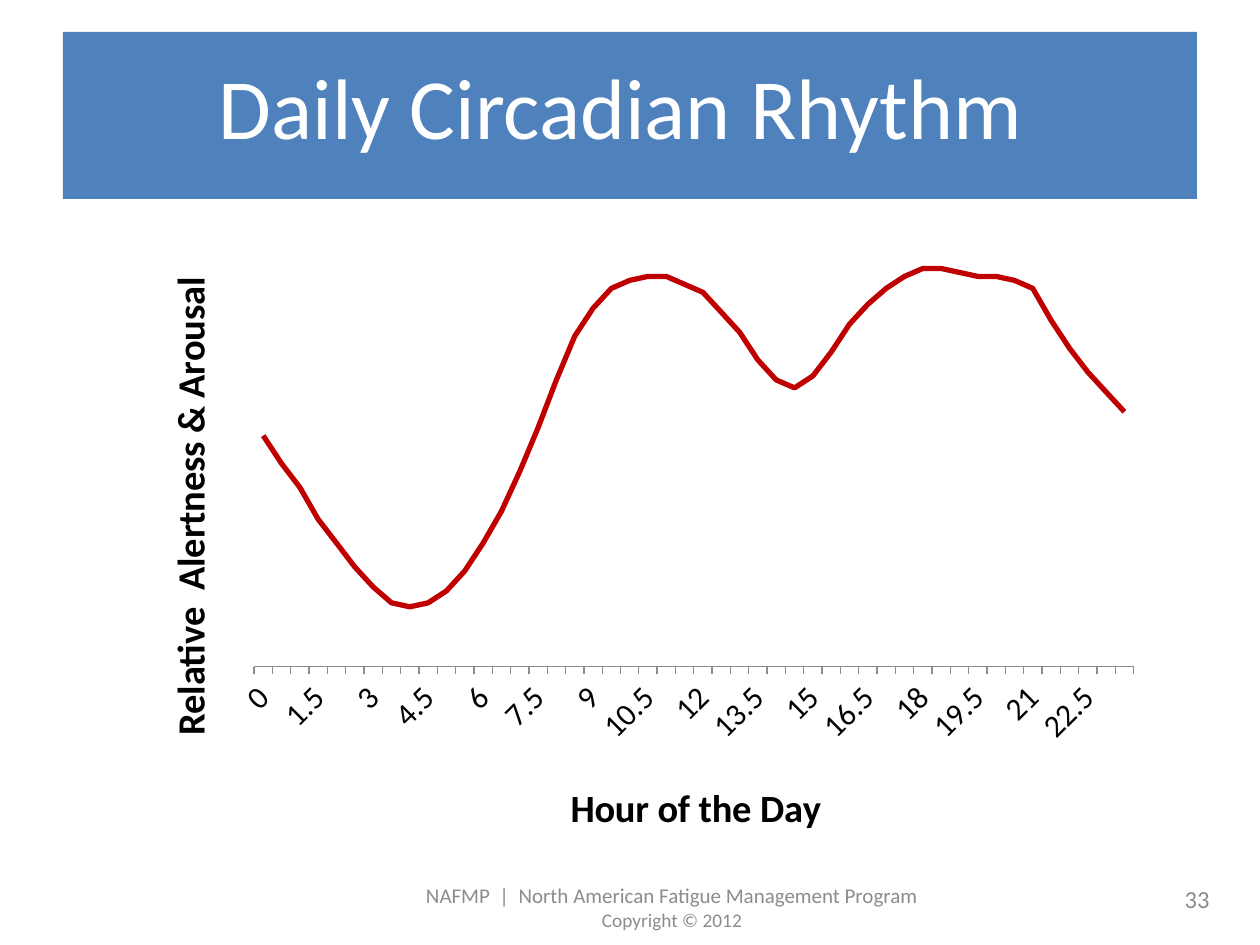
from lxml.etree import SubElement, fromstring
from pptx import Presentation
from pptx.chart.data import CategoryChartData
from pptx.dml.color import RGBColor
from pptx.enum.chart import XL_CHART_TYPE, XL_TICK_MARK
from pptx.enum.shapes import MSO_SHAPE
from pptx.enum.text import MSO_ANCHOR, PP_ALIGN
from pptx.oxml.ns import qn
from pptx.util import Emu, Pt


class Theme:
    font = "Calibri"
    band = RGBColor.from_string("4F81BD")
    white = RGBColor.from_string("FFFFFF")
    black = RGBColor.from_string("000000")
    grey = RGBColor.from_string("8C8C8C")
    curve = RGBColor.from_string("C00000")
    title_size, axis_title_size, label_size = Pt(49), Pt(22), Pt(18)
    number_size, footer_size, copyright_size = Pt(14), Pt(12), Pt(11)


SCALE = 914400 / 126  # EMU per px
CHART = (136, 220, 1018, 630)


def px(*lengths):
    return [Emu(round(length * SCALE)) for length in lengths]


def set_layout(element, index, **values):
    """Place a chart part by hand, in fractions of the chart."""
    for old in element.findall(qn("c:layout")):
        element.remove(old)
    layout = fromstring(f'<c:layout xmlns:c="{element.nsmap["c"]}"/>')
    manual = SubElement(layout, qn("c:manualLayout"))
    if "w" in values:
        SubElement(manual, qn("c:layoutTarget"), val="inner")
    for mode in ("xMode", "yMode"):
        SubElement(manual, qn(f"c:{mode}"), val="edge")
    for name, value in values.items():
        SubElement(manual, qn(f"c:{name}"), val=str(value))
    element.insert(index, layout)


deck = Presentation()
deck.slide_width, deck.slide_height = px(1260, 945)
page = deck.slides.add_slide(deck.slide_layouts[5])
title = page.shapes.title

# Title band, behind the title
band = page.shapes.add_shape(MSO_SHAPE.RECTANGLE, *px(63, 32, 1134, 167))
band.shadow.inherit = False
band.fill.solid()
band.fill.fore_color.rgb = Theme.band
band.line.fill.background()
title._element.addprevious(band._element)

# Title
title.left, title.top, title.width, title.height = px(63, 38, 1134, 157)
title.text_frame.text = "Daily Circadian Rhythm "
title.text_frame.vertical_anchor = MSO_ANCHOR.MIDDLE
para = title.text_frame.paragraphs[0]
para.alignment = PP_ALIGN.CENTER
para.line_spacing = Pt(45.8)
para.font.name, para.font.size = Theme.font, Theme.title_size
para.font.color.rgb = Theme.white

# Footer and page number
small_texts = [
    ((378, 883, 588, 48), PP_ALIGN.CENTER,
     [("NAFMP  |  North American Fatigue Management Program", Theme.footer_size),
      ("Copyright © 2012", Theme.copyright_size)]),
    ((929, 874, 293, 50), PP_ALIGN.RIGHT, [("33", Theme.number_size)]),
]
for place, alignment, lines in small_texts:
    box = page.shapes.add_textbox(*px(*place))
    frame = box.text_frame
    frame.word_wrap = True
    frame.vertical_anchor = MSO_ANCHOR.MIDDLE
    frame.margin_top = frame.margin_bottom = 0
    frame.text = "\n".join(text for text, size in lines)
    for para, (text, size) in zip(frame.paragraphs, lines):
        para.alignment = alignment
        para.font.name, para.font.size = Theme.font, size
        para.font.color.rgb = Theme.grey

# Alertness at every half hour
alertness = [
    58, 51, 45, 37, 31, 25, 20, 16, 15, 16, 19, 24,
    31, 39, 49, 60, 72, 83, 90, 95, 97, 98, 98, 96,
    94, 89, 84, 77, 72, 70, 73, 79, 86, 91, 95, 98,
    100, 100, 99, 98, 98, 97, 95, 87, 80, 74, 69, 64,
]
data = CategoryChartData()
data.categories = [f"{half / 2:g}" for half in range(len(alertness))]
data.add_series("Series 1", alertness)
chart = page.shapes.add_chart(XL_CHART_TYPE.LINE, *px(*CHART), data).chart
chart.has_legend = chart.has_title = False
chart.font.name, chart.font.size = Theme.font, Pt(10)
chart.font.color.rgb = Theme.black
chart.plots[0].vary_by_categories = False
series = chart.plots[0].series[0]
series.smooth = False
series.format.line.color.rgb = Theme.curve
series.format.line.width = Pt(3)

# Axes
hours, level = chart.category_axis, chart.value_axis
level.minimum_scale, level.maximum_scale = 0, 100
level.has_major_gridlines = False
level.tick_labels.number_format = "0.0"
level.tick_labels.number_format_is_linked = False
level.visible = False
hours.major_tick_mark = XL_TICK_MARK.OUTSIDE
hours.format.line.color.rgb = Theme.grey
hours.tick_labels.font.size = Theme.label_size
hours._element.txPr.bodyPr.set("rot", "-2700000")
last = hours._element.find(qn("c:noMultiLvlLbl"))
for tag, step in (("c:tickLblSkip", 3), ("c:tickMarkSkip", 1)):
    skip = SubElement(hours._element, qn(tag), val=str(step))
    last.addprevious(skip)

# Axis titles and plot area
for axis, text, x, y in ((hours, "Hour of the Day", 0.42, 0.88),
                         (level, "Relative  Alertness & Arousal", 0.02, 0.08)):
    frame = axis.axis_title.text_frame
    frame.text = text
    font = frame.paragraphs[0].font
    font.name, font.size, font.bold = Theme.font, Theme.axis_title_size, True
    font.color.rgb = Theme.black
    if axis is level:
        frame._txBody.bodyPr.set("rot", "-5400000")
        frame._txBody.bodyPr.set("vert", "horz")
    set_layout(axis.axis_title._element, 1, x=x, y=y)
plot_area = chart._chartSpace.chart.plotArea
set_layout(plot_area, 0, x=0.116, y=0.077, w=0.864, h=0.632)

deck.save("out.pptx")
